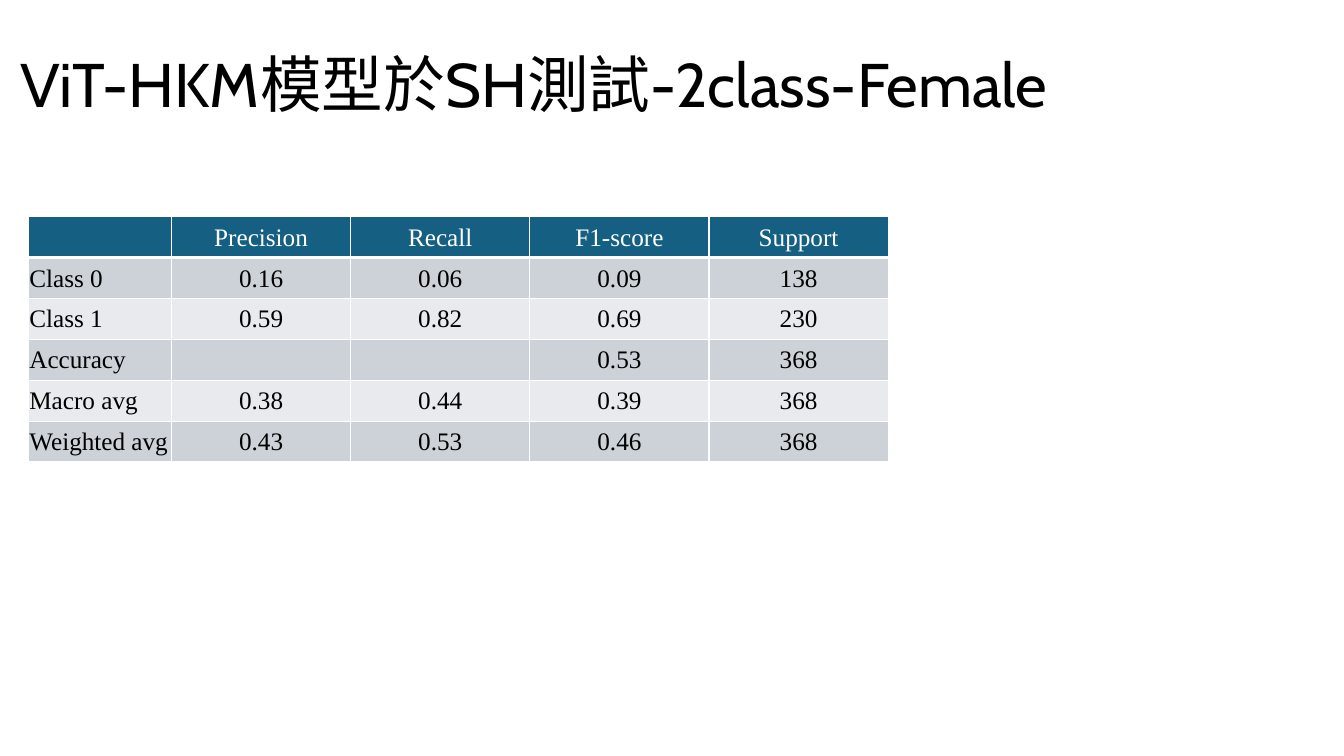
import pptx
import pptx.dml.color
import pptx.enum.text
import pptx.oxml
import pptx.oxml.ns
import pptx.util
from lxml import etree

Pt = pptx.util.Pt
ALIGN = pptx.enum.text.PP_ALIGN
MIDDLE = pptx.enum.text.MSO_ANCHOR.MIDDLE

HEADER_FILL = "156082"
BAND_FILLS = ["CCD2D8", "E8EAED"]
LABEL_WIDTH, METRIC_WIDTH, ROW_HEIGHT = 102.24, 128, 29.2

SCORES = [
    ["", "Precision", "Recall", "F1-score", "Support"],
    ["Class 0", "0.16", "0.06", "0.09", "138"],
    ["Class 1", "0.59", "0.82", "0.69", "230"],
    ["Accuracy", "", "", "0.53", "368"],
    ["Macro avg", "0.38", "0.44", "0.39", "368"],
    ["Weighted avg", "0.43", "0.53", "0.46", "368"],
]


def rgb(color):
    return pptx.dml.color.RGBColor.from_string(color)


def write_text(tf, text, size=18, font="Times New Roman", color="000000",
               align=ALIGN.LEFT, spacing=1.0):
    p = tf.paragraphs[0]
    p.alignment = align
    p.line_spacing = spacing
    if text:
        r = p.add_run()
        r.text = text
        r.font.size = Pt(size)
        r.font.name = font
        r.font.color.rgb = rgb(color)


def add_title(s, text):
    sp = s.shapes.title
    sp.left, sp.top, sp.width, sp.height = Pt(7.2), Pt(10), Pt(939), Pt(104.4)
    sp.text_frame.vertical_anchor = MIDDLE
    write_text(sp.text_frame, text, size=44, font="Cabin", spacing=0.9)


def set_borders(cell, color="FFFFFF", **widths):
    """Draw cell edges; call before filling, as edges precede the fill in XML."""
    qn = pptx.oxml.ns.qn
    tc_pr = cell._tc.get_or_add_tcPr()
    for side in "LRTB":
        ln = etree.SubElement(tc_pr, qn(f"a:ln{side}"), w=str(Pt(widths.get(side, 1))))
        fill = etree.SubElement(ln, qn("a:solidFill"))
        etree.SubElement(fill, qn("a:srgbClr"), val=color)


def format_cell(cell, fill, **widths):
    set_borders(cell, **widths)
    cell.fill.solid()
    cell.fill.fore_color.rgb = rgb(fill)
    cell.vertical_anchor = MIDDLE
    cell.margin_left = cell.margin_right = cell.margin_top = Pt(0.7)
    cell.margin_bottom = Pt(0)


def add_score_table(s, rows, left, top):
    count = len(rows[0])
    width = LABEL_WIDTH + METRIC_WIDTH * (count - 1)
    table = s.shapes.add_table(len(rows), count, Pt(left), Pt(top), Pt(width),
                               Pt(ROW_HEIGHT * len(rows))).table
    for j, column in enumerate(table.columns):
        column.width = Pt(METRIC_WIDTH if j else LABEL_WIDTH)
    for i, row in enumerate(rows):
        table.rows[i].height = Pt(ROW_HEIGHT)
        fill = BAND_FILLS[(i - 1) % 2] if i else HEADER_FILL
        for j, text in enumerate(row):
            cell = table.cell(i, j)
            format_cell(cell, fill, T=3 if i == 1 else 1, B=1 if i else 3)
            write_text(cell.text_frame, text, color="000000" if i else "FFFFFF",
                       align=ALIGN.CENTER if j else ALIGN.LEFT)


def main():
    prs = pptx.Presentation()
    prs.slide_width, prs.slide_height = Pt(960), Pt(540)
    s = prs.slides.add_slide(prs.slide_layouts[5])
    add_title(s, "ViT-HKM模型於SH測試-2class-Female")
    add_score_table(s, SCORES, left=20.3, top=154.8)
    prs.save("out.pptx")


if __name__ == "__main__":
    main()
